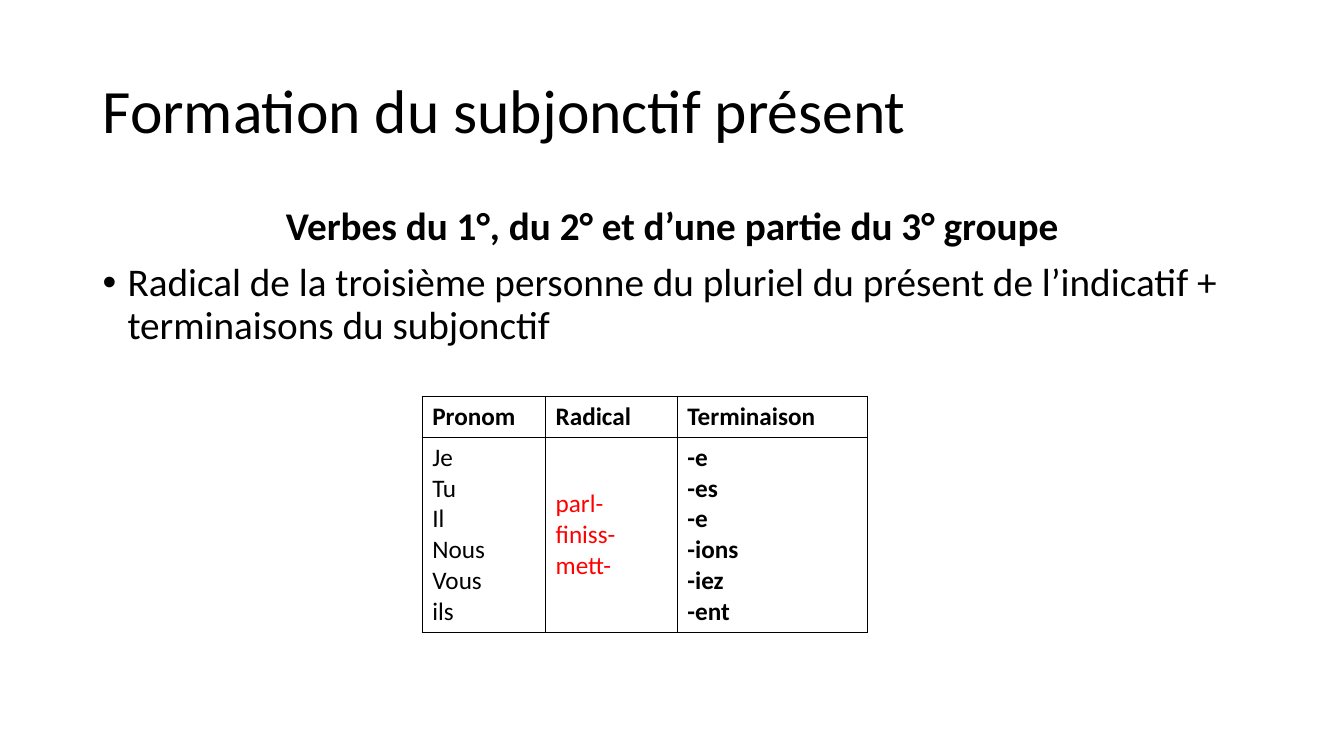
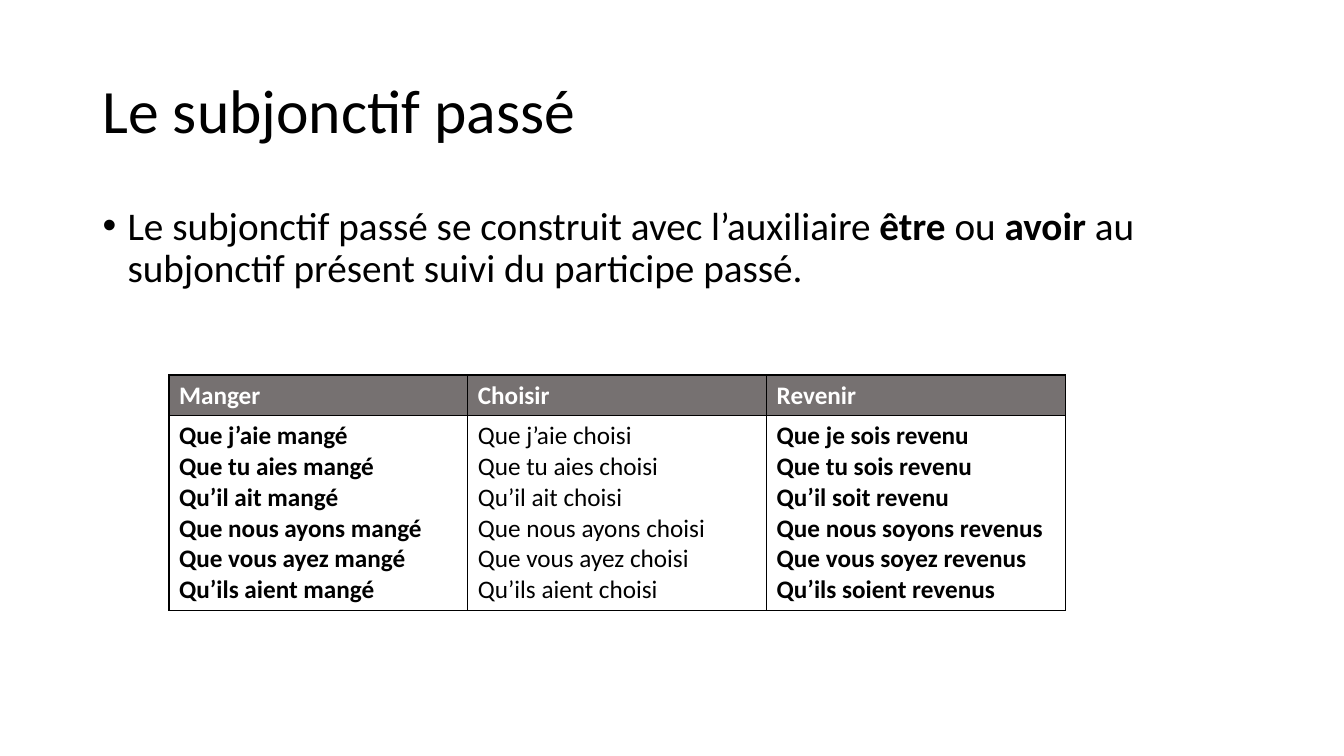
from dataclasses import dataclass

from lxml import etree
from pptx import Presentation
from pptx.dml.color import RGBColor
from pptx.enum.text import MSO_ANCHOR, MSO_AUTO_SIZE, PP_ALIGN
from pptx.oxml.ns import qn
from pptx.util import Cm, Pt

LEFT, CENTER = PP_ALIGN.LEFT, PP_ALIGN.CENTER
TOP, MIDDLE = MSO_ANCHOR.TOP, MSO_ANCHOR.MIDDLE
NO_FIT = MSO_AUTO_SIZE.NONE


@dataclass(frozen=True)
class Theme:
    font: str = "Calibri"
    black: str = "000000"
    white: str = "FFFFFF"
    red: str = "FF0000"
    gray: str = "767171"
    title_size: int = 44
    body_size: int = 28
    table_size: int = 18
    line_spacing: float = 0.9
    paragraph_gap: int = 10
    border: int = 1


THEME = Theme()
SLIDE_SIZE = (33.87, 19.05)
TITLE_AREA = (2.33, 1.01, 29.21, 3.68)
BODY_AREA = (2.33, 5.08, 29.21, 12.09)
BULLET_INDENT = 0.63
ROW_HEIGHTS = (1.03, 4.91)

PAGES = [
    {
        "title": "Formation du subjonctif présent",
        "body": [
            {"bullet": False, "spans": [
                ("Verbes du 1°, du 2° et d’une partie du 3° groupe", True)]},
            {"bullet": True, "spans": [
                ("Radical de la troisième personne du pluriel du présent de "
                 "l’indicatif + terminaisons du subjonctif", False)]},
        ],
        "table": {
            "corner": (10.64, 9.99),
            "widths": (3.11, 3.32, 4.8),
            "header_fill": THEME.white,
            "header_color": THEME.black,
            "columns": [
                {"head": "Pronom",
                 "lines": ["Je", "Tu", "Il", "Nous", "Vous", "ils"]},
                {"head": "Radical", "color": THEME.red, "anchor": MIDDLE,
                 "lines": ["parl-", "finiss-", "mett-"]},
                {"head": "Terminaison", "bold": True,
                 "lines": ["-e", "-es", "-e", "-ions", "-iez", "-ent"]},
            ],
        },
    },
    {
        "title": "Le subjonctif passé",
        "body": [
            {"bullet": True, "spans": [
                ("Le subjonctif passé se construit avec l’auxiliaire ", False),
                ("être", True),
                (" ou ", False),
                ("avoir", True),
                (" au subjonctif présent suivi du participe passé.", False)]},
        ],
        "table": {
            "corner": (4.26, 9.45),
            "widths": (7.53,) * 3,
            "header_fill": THEME.gray,
            "header_color": THEME.white,
            "columns": [
                {"head": "Manger", "bold": True,
                 "lines": ["Que j’aie mangé", "Que tu aies mangé",
                           "Qu’il ait mangé", "Que nous ayons mangé",
                           "Que vous ayez mangé", "Qu’ils aient mangé"]},
                {"head": "Choisir",
                 "lines": ["Que j’aie choisi", "Que tu aies choisi",
                           "Qu’il ait choisi", "Que nous ayons choisi",
                           "Que vous ayez choisi", "Qu’ils aient choisi"]},
                {"head": "Revenir", "bold": True,
                 "lines": ["Que je sois revenu", "Que tu sois revenu",
                           "Qu’il soit revenu", "Que nous soyons revenus",
                           "Que vous soyez revenus", "Qu’ils soient revenus"]},
            ],
        },
    },
]


def add_span(para, text, size, color=THEME.black, bold=False):
    span = para.add_run()
    span.text = text
    span.font.name = THEME.font
    span.font.size = Pt(size)
    span.font.bold = bold
    span.font.color.rgb = RGBColor.from_string(color)


def paragraphs(frame, items):
    for index, item in enumerate(items):
        para = frame.paragraphs[0] if index == 0 else frame.add_paragraph()
        yield index, para, item


def place(box, area, anchor):
    box.left, box.top, box.width, box.height = map(Cm, area)
    frame = box.text_frame
    frame.word_wrap = True
    frame.auto_size = NO_FIT
    frame.vertical_anchor = anchor
    return frame


def set_bullet(para, shown):
    indent = Cm(BULLET_INDENT) if shown else 0
    properties = para._p.get_or_add_pPr()
    properties.set("marL", str(indent))
    properties.set("indent", str(-indent))
    if shown:
        etree.SubElement(properties, qn("a:buFont"), typeface="Arial")
        etree.SubElement(properties, qn("a:buChar"), char="•")
    else:
        etree.SubElement(properties, qn("a:buNone"))


def fill_title(box, text):
    para = place(box, TITLE_AREA, MIDDLE).paragraphs[0]
    para.alignment = LEFT
    para.line_spacing = THEME.line_spacing
    add_span(para, text, THEME.title_size)


def fill_body(box, items):
    frame = place(box, BODY_AREA, TOP)
    for index, para, item in paragraphs(frame, items):
        set_bullet(para, item["bullet"])
        para.alignment = LEFT if item["bullet"] else CENTER
        para.line_spacing = THEME.line_spacing
        para.space_before = Pt(THEME.paragraph_gap if index else 0)
        for text, bold in item["spans"]:
            add_span(para, text, THEME.body_size, bold=bold)


def set_borders(cell):
    properties = cell._tc.get_or_add_tcPr()
    for side in ("a:lnL", "a:lnR", "a:lnT", "a:lnB"):
        line = etree.SubElement(properties, qn(side), w=str(Pt(THEME.border)))
        fill = etree.SubElement(line, qn("a:solidFill"))
        etree.SubElement(fill, qn("a:srgbClr"), val=THEME.black)


def fill_cell(cell, lines, fill, color, bold, anchor=TOP):
    set_borders(cell)
    cell.fill.solid()
    cell.fill.fore_color.rgb = RGBColor.from_string(fill)
    cell.vertical_anchor = anchor
    for _, para, text in paragraphs(cell.text_frame, lines):
        add_span(para, text, THEME.table_size, color, bold)


def add_grid(page, content):
    columns, widths = content["columns"], content["widths"]
    area = (*content["corner"], sum(widths), sum(ROW_HEIGHTS))
    table = page.shapes.add_table(
        len(ROW_HEIGHTS), len(columns), *map(Cm, area)).table
    table.first_row = table.horz_banding = False
    for row, height in zip(table.rows, ROW_HEIGHTS):
        row.height = Cm(height)
    for index, (column, width) in enumerate(zip(columns, widths)):
        table.columns[index].width = Cm(width)
        fill_cell(table.cell(0, index), [column["head"]],
                  content["header_fill"], content["header_color"], True)
        fill_cell(table.cell(1, index), column["lines"], THEME.white,
                  column.get("color", THEME.black),
                  column.get("bold", False), column.get("anchor", TOP))


def main():
    deck = Presentation()
    deck.slide_width, deck.slide_height = map(Cm, SLIDE_SIZE)
    for content in PAGES:
        page = deck.slides.add_slide(deck.slide_layouts[1])
        fill_title(page.shapes.title, content["title"])
        fill_body(page.placeholders[1], content["body"])
        add_grid(page, content["table"])
    deck.save("out.pptx")


if __name__ == "__main__":
    main()
